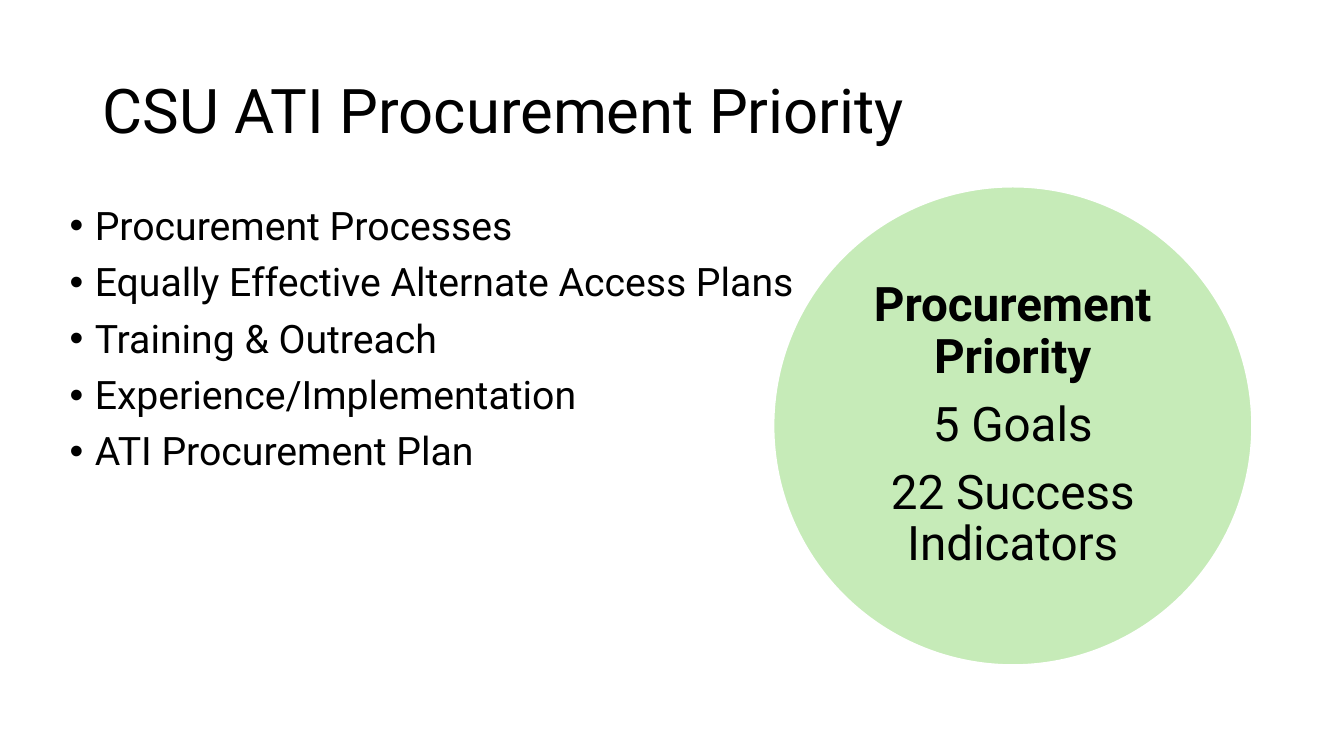
from lxml import etree
from pptx import Presentation
from pptx.dml.color import RGBColor
from pptx.enum.shapes import MSO_SHAPE
from pptx.enum.text import MSO_ANCHOR, PP_ALIGN
from pptx.oxml.ns import qn
from pptx.util import Pt

PX = 9144  # 100 px to the inch
LEFT, CENTER = PP_ALIGN.LEFT, PP_ALIGN.CENTER
TOP, MIDDLE = MSO_ANCHOR.TOP, MSO_ANCHOR.MIDDLE
OVAL = MSO_SHAPE.OVAL

TITLE = ["CSU ATI Procurement Priority"]
TOPICS = [
    "Procurement Processes",
    "Equally Effective Alternate Access Plans",
    "Training & Outreach",
    "Experience/Implementation",
    "ATI Procurement Plan",
]
PRIORITY = ["Procurement Priority", "5 Goals", "22 Success Indicators"]


def color(value):
    return RGBColor.from_string(value)


def write(shape, lines, size, align, anchor, insets, before=0, after=0, bullet=False):
    frame = shape.text_frame
    frame.word_wrap = True
    frame.vertical_anchor = anchor
    frame.margin_left = frame.margin_right = insets[0] * PX
    frame.margin_top = frame.margin_bottom = insets[1] * PX
    frame.text = "\n".join(lines)
    for index, para in enumerate(frame.paragraphs):
        if bullet:
            props = para._p.get_or_add_pPr()
            props.set("marL", str(25 * PX))
            props.set("indent", str(-25 * PX))
            etree.SubElement(props, qn("a:buFont")).set("typeface", "Arial")
            etree.SubElement(props, qn("a:buChar")).set("char", "•")
        formats = {
            "alignment": align,
            "line_spacing": 0.9,
            "space_before": Pt(before if index else 0),
            "space_after": Pt(after),
        }
        for name, value in formats.items():
            setattr(para, name, value)
        for span in para.runs:
            for name, value in {"name": "Roboto", "size": Pt(size)}.items():
                setattr(span.font, name, value)
            span.font.color.rgb = color("000000")


deck = Presentation()
deck.slide_width, deck.slide_height = 1333 * PX, 750 * PX
page = deck.slides.add_slide(deck.slide_layouts[1])
title, body = page.placeholders

# Title and list of topics
for box, place in ((title, (92, 40, 1150, 145)), (body, (59, 200, 1150, 476))):
    box.left, box.top, box.width, box.height = (length * PX for length in place)
write(title, TITLE, 44, LEFT, MIDDLE, (10, 5))
write(body, TOPICS, 28, LEFT, TOP, (10, 5), before=10, bullet=True)

# Priority circle
circle = page.shapes.add_shape(OVAL, 767 * PX, 185 * PX, 475 * PX, 475 * PX)
circle.shadow.inherit = False
circle.fill.solid()
circle.fill.fore_color.rgb = color("8ED973")
tint = circle.fill._xPr.find(qn("a:solidFill"))[0]
etree.SubElement(tint, qn("a:alpha")).set("val", "50000")
circle.line.color.rgb = color("FFFFFF")
circle.line.width = Pt(1.5)
write(circle, PRIORITY, 34, CENTER, MIDDLE, (26, 5), after=12)
circle.text_frame.paragraphs[0].runs[0].font.bold = True

deck.save("out.pptx")
